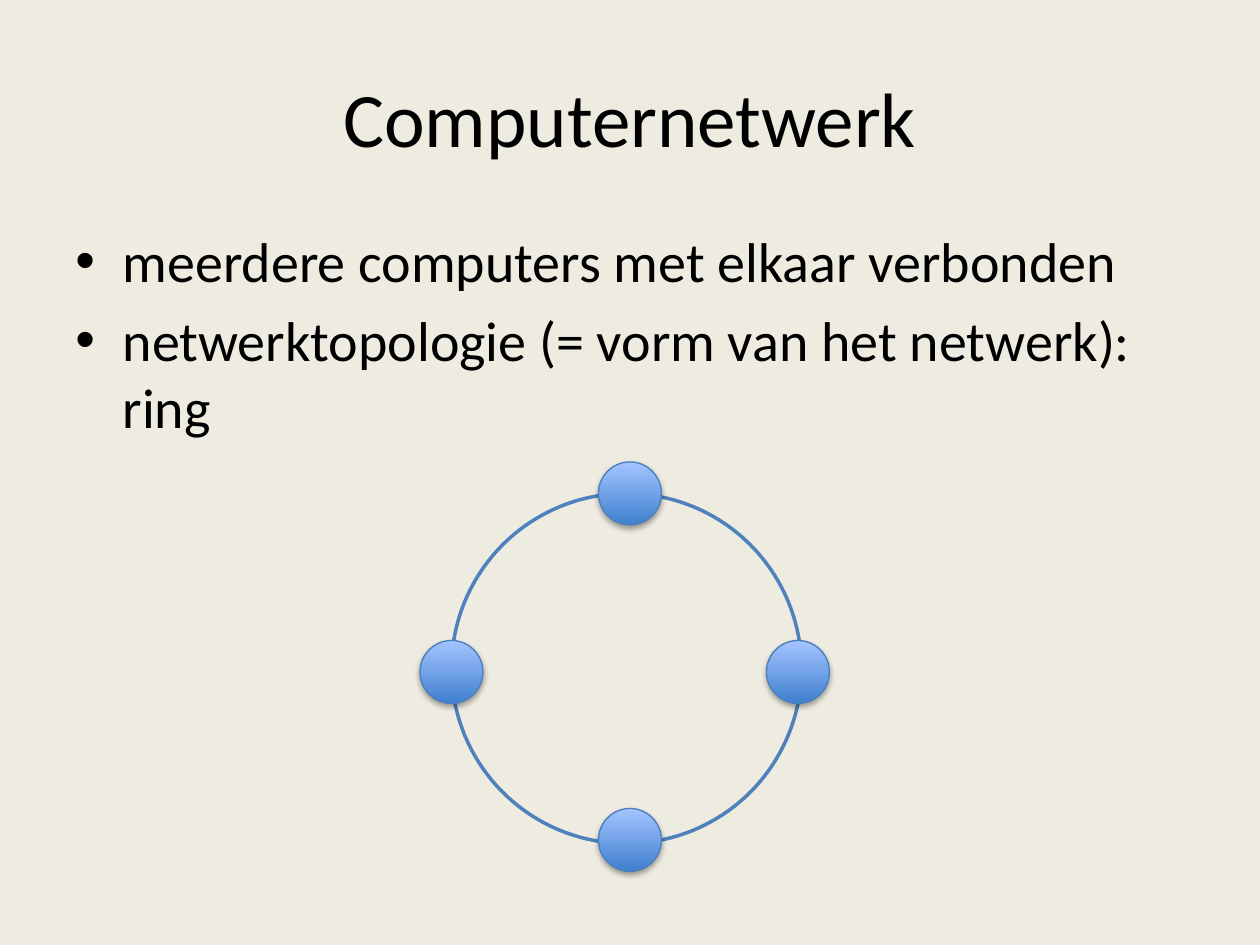
import dataclasses

import lxml.etree
import pptx
import pptx.dml.color
import pptx.enum.shapes
import pptx.enum.text
import pptx.oxml.ns
import pptx.util

Pt = pptx.util.Pt
Rgb = pptx.dml.color.RGBColor.from_string
qn = pptx.oxml.ns.qn


@dataclasses.dataclass(frozen=True)
class Theme:
    font: str = "Calibri"
    ink: str = "000000"
    paper: str = "EEECE1"
    ring: str = "4F81BD"
    edge: str = "4B7EBC"
    dark: str = "3F80CE"
    light: str = "A4C4FF"
    title: int = 44
    body: int = 32


THEME = Theme()
BULLETS = (
    "meerdere computers met elkaar verbonden",
    "netwerktopologie (= vorm van het netwerk): ring",
)


def style(para, size):
    para.font.name = THEME.font
    para.font.size = Pt(size)
    para.font.color.rgb = Rgb(THEME.ink)


def add_title(slide, text):
    title = slide.shapes.title
    title.left, title.top, title.width, title.height = Pt(36), Pt(21.6), Pt(648), Pt(90)
    frame = title.text_frame
    frame.text = text
    frame.vertical_anchor = pptx.enum.text.MSO_ANCHOR.MIDDLE
    para = frame.paragraphs[0]
    para.alignment = pptx.enum.text.PP_ALIGN.CENTER
    style(para, THEME.title)


def add_list(slide, items):
    box = slide.shapes.add_textbox(Pt(36), Pt(126), Pt(648), Pt(356.4))
    frame = box.text_frame
    frame.word_wrap = True
    for index, item in enumerate(items):
        para = frame.add_paragraph() if index else frame.paragraphs[0]
        para.text = item
        para.space_before = Pt(0.2 * THEME.body)
        style(para, THEME.body)
        props = para._p.get_or_add_pPr()
        props.set("marL", str(Pt(27)))
        props.set("indent", str(-Pt(27)))
        lxml.etree.SubElement(props, qn("a:buFont"), typeface="Arial")
        lxml.etree.SubElement(props, qn("a:buChar"), char="•")


def add_disc(slide, x, y, size, color, width):
    """Add an ellipse centred on x, y, with no shadow."""
    disc = slide.shapes.add_shape(
        pptx.enum.shapes.MSO_SHAPE.OVAL,
        Pt(x - size / 2), Pt(y - size / 2), Pt(size), Pt(size))
    disc.shadow.inherit = False
    disc.line.color.rgb = Rgb(color)
    disc.line.width = Pt(width)
    return disc


def add_shadow(shape):
    effects = shape._element.spPr.find(qn("a:effectLst"))
    shadow = lxml.etree.SubElement(
        effects, qn("a:outerShdw"), blurRad=str(Pt(3.15)), dist=str(Pt(1.8)),
        dir="5400000", rotWithShape="0")
    color = lxml.etree.SubElement(shadow, qn("a:srgbClr"), val="000000")
    lxml.etree.SubElement(color, qn("a:alpha"), val="35000")


def add_node(slide, x, y):
    node = add_disc(slide, x, y, 36, THEME.edge, 0.75)
    node.fill.gradient()
    node.fill.gradient_angle = 90
    for stop, color in zip(node.fill.gradient_stops, (THEME.dark, THEME.light)):
        stop.color.rgb = Rgb(color)
    for stop, place in zip(node.fill.gradient_stops, (0, 1)):
        stop.position = place
    add_shadow(node)


def add_ring(slide):
    ring = add_disc(slide, 358, 382, 200, THEME.ring, 2)
    ring.fill.background()
    left, mid, right = 258, 360, 456
    top, centre, bottom = 282, 384, 480
    for x, y in ((mid, top), (right, centre), (mid, bottom), (left, centre)):
        add_node(slide, x, y)


def main():
    deck = pptx.Presentation()
    deck.slide_width, deck.slide_height = Pt(720), Pt(540)
    slide = deck.slides.add_slide(deck.slide_layouts[5])
    slide.background.fill.solid()
    slide.background.fill.fore_color.rgb = Rgb(THEME.paper)
    add_title(slide, "Computernetwerk")
    add_list(slide, BULLETS)
    add_ring(slide)
    deck.save("out.pptx")


if __name__ == "__main__":
    main()
